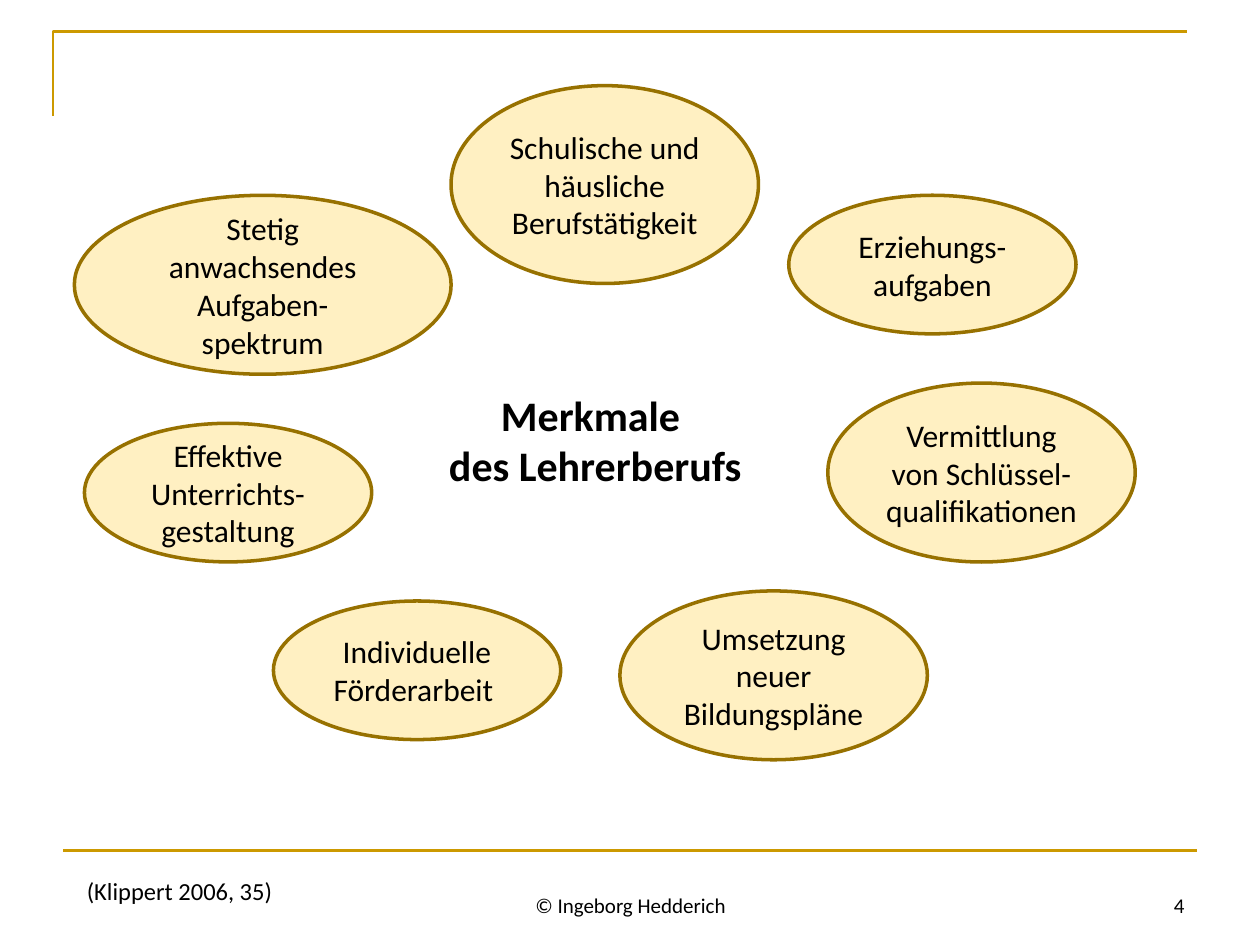
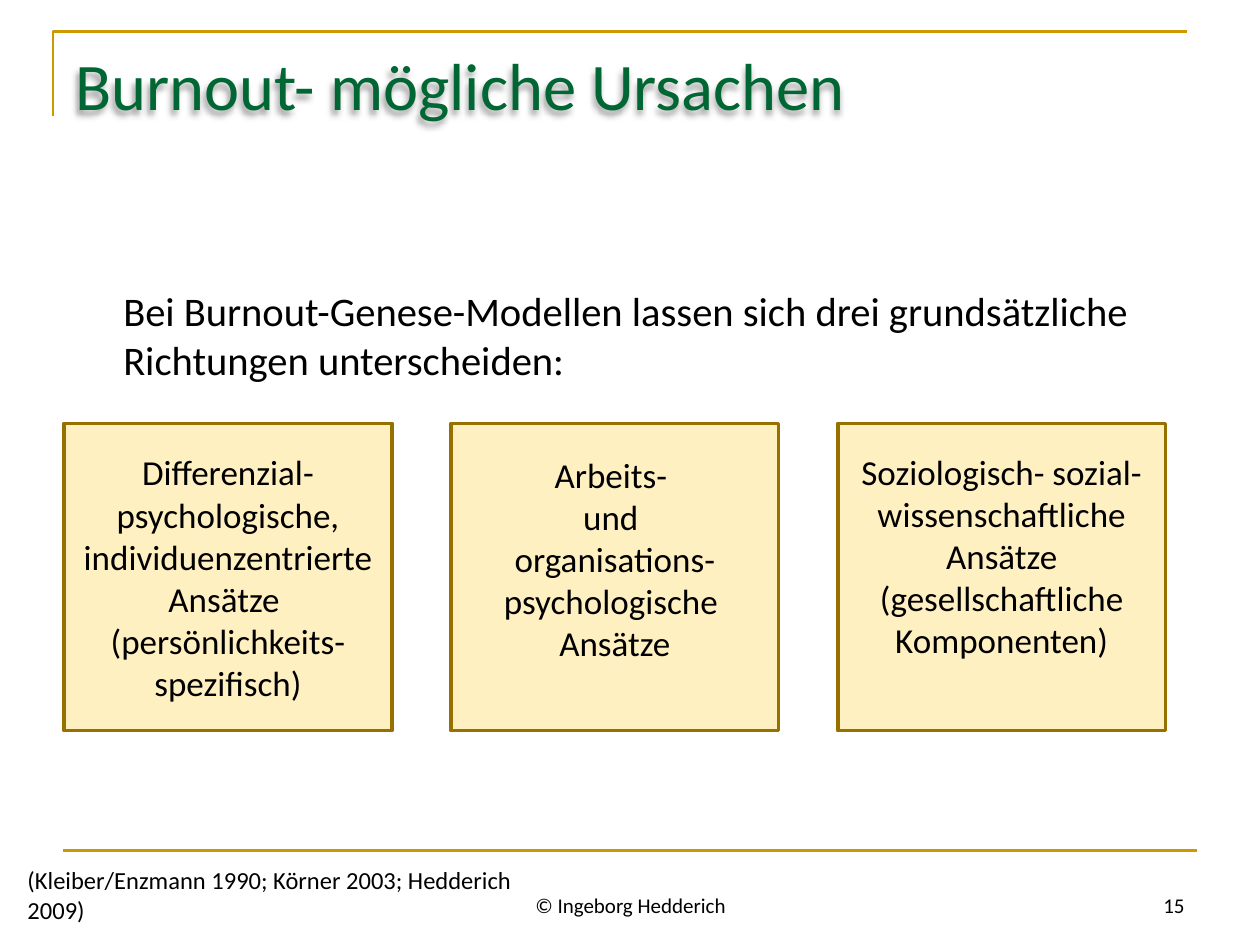
from lxml import etree
from pptx import Presentation
from pptx.dml.color import RGBColor
from pptx.enum.shapes import MSO_CONNECTOR, MSO_SHAPE
from pptx.enum.text import MSO_ANCHOR, PP_ALIGN
from pptx.oxml.ns import qn
from pptx.util import Inches, Pt

OVAL, BOX = MSO_SHAPE.OVAL, MSO_SHAPE.RECTANGLE
STRAIGHT = MSO_CONNECTOR.STRAIGHT
TOP, MIDDLE, BOTTOM = MSO_ANCHOR.TOP, MSO_ANCHOR.MIDDLE, MSO_ANCHOR.BOTTOM
LEFT, CENTER, RIGHT = PP_ALIGN.LEFT, PP_ALIGN.CENTER, PP_ALIGN.RIGHT

COLORS = {
    "rule": "CC9900",
    "fill": "FFF0C2",
    "outline": "977100",
    "title": "006633",
    "text": "000000",
}
FONT = "Calibri"
COLUMNS, ROWS = 100, 75  # grid cells across and down the slide


def color(name):
    return RGBColor.from_string(COLORS[name])


class Deck:
    """Holds the shared style and the slide being built."""

    def __init__(self):
        self.prs = Presentation()
        self.prs.slide_width, self.prs.slide_height = Inches(10), Inches(7.5)
        self.shapes = None

    def x(self, columns):
        return round(self.prs.slide_width * columns / COLUMNS)

    def y(self, rows):
        return round(self.prs.slide_height * rows / ROWS)

    def area(self, left, top, width, height):
        return self.x(left), self.y(top), self.x(width), self.y(height)

    def new_slide(self, number):
        self.shapes = self.prs.slides.add_slide(self.prs.slide_layouts[6]).shapes
        self.corner()
        self.rule(5, 95, 67.5)
        self.text((34.2, 68.3, 31.7, 5), "© Ingeborg Hedderich", 12, CENTER, BOTTOM)
        self.text((71.7, 68.3, 23.3, 5), str(number), 12, RIGHT, BOTTOM)

    def corner(self):
        left, top = self.x(4.2), self.y(2.5)
        outline = self.shapes.build_freeform(left, self.y(9.2))
        outline.add_line_segments([(left, top), (self.x(94.2), top)], close=False)
        corner = outline.convert_to_shape()
        corner.shadow.inherit = False
        corner.fill.background()
        self.stroke(corner, "rule", 1.5)

    def rule(self, start, end, row):
        rule = self.shapes.add_connector(
            STRAIGHT, self.x(start), self.y(row), self.x(end), self.y(row))
        self.stroke(rule, "rule", 1.5)
        etree.SubElement(rule._element.spPr, qn("a:effectLst"))

    def stroke(self, shape, name, width):
        shape.line.color.rgb = color(name)
        shape.line.width = Pt(width)

    def set_text(self, shape, text, size, align, anchor, ink="text", bold=False):
        frame = shape.text_frame
        frame.text = text
        frame.word_wrap = True
        frame.vertical_anchor = anchor
        for paragraph in frame.paragraphs:
            paragraph.alignment = align
            font = paragraph.font
            font.name, font.size, font.bold = FONT, Pt(size), bold
            font.color.rgb = color(ink)

    def text(self, area, text, size, align=LEFT, anchor=TOP, **style):
        box = self.shapes.add_textbox(*self.area(*area))
        self.set_text(box, text, size, align, anchor, **style)
        return box

    def title(self, text):
        title = self.text((5, 3, 90, 12.5), text, 38, ink="title")
        effects = etree.SubElement(title._element.spPr, qn("a:effectLst"))
        shadow = etree.SubElement(effects, qn("a:outerShdw"), blurRad="50800",
                                  dist="38100", dir="8100000")
        black = etree.SubElement(shadow, qn("a:srgbClr"), val=COLORS["text"])
        etree.SubElement(black, qn("a:alpha"), val="40000")

    def panel(self, kind, area, text, size, space_below=0.0):
        panel = self.shapes.add_shape(kind, *self.area(*area))
        panel.shadow.inherit = False
        panel.fill.solid()
        panel.fill.fore_color.rgb = color("fill")
        self.stroke(panel, "outline", 2)
        self.set_text(panel, text, size, CENTER, MIDDLE)
        panel.text_frame.margin_bottom = Inches(0.05 + space_below)


def build_profession(deck):
    deck.new_slide(4)
    deck.text((5.9, 69, 18.9, 3.4), "(Klippert 2006, 35)", 14)
    deck.text((31.9, 30.4, 30.7, 9.1), "Merkmale \ndes Lehrerberufs", 24,
              CENTER, bold=True)

    # Features around the centre, with the common oval sizes
    small, wide = (22.8, 11), 24.4
    features = [
        ((5.9, 15.5), (29.9, 14.2), "Stetig anwachsendes Aufgaben-spektrum"),
        ((6.7, 33.6), small, "Effektive Unterrichts-\ngestaltung"),
        ((21.7, 47.7), small, "Individuelle Förderarbeit "),
        ((49.2, 46.9), (wide, 13.4), "Umsetzung neuer Bildungspläne"),
        ((62.6, 15.5), small, "Erziehungs-aufgaben"),
        ((65.7, 30.4), (wide, 14.2), "Vermittlung von Schlüssel-qualifikationen"),
        ((35.8, 6.8), (wide, 15.7), "Schulische und häusliche Berufstätigkeit"),
    ]
    for place, size, feature in features:
        deck.panel(OVAL, place + size, feature, 18)


def build_causes(deck):
    deck.new_slide(15)
    deck.title("Burnout- mögliche Ursachen")
    deck.text((8.8, 22.2, 86.2, 9),
              "Bei Burnout-Genese-Modellen lassen sich drei grundsätzliche "
              "Richtungen unterscheiden:", 23.2)
    deck.text((1.2, 68.2, 41.7, 5.7),
              "(Kleiber/Enzmann 1990; Körner 2003; Hedderich 2009)", 14)

    # Three approaches in equal steps; the shorter texts sit a line higher
    approaches = [
        ("Differenzial-psychologische, individuenzentrierte Ansätze \n"
         "(persönlichkeits-spezifisch)", 0),
        ("Arbeits- \nund \norganisations-psychologische \nAnsätze", 0.3),
        ("Soziologisch- sozial-wissenschaftliche Ansätze "
         "(gesellschaftliche Komponenten)", 0.34),
    ]
    for step, (approach, space_below) in enumerate(approaches):
        deck.panel(BOX, (5.1 + 30.7 * step, 33.6, 26, 24.4), approach, 20,
                   space_below)


def main():
    deck = Deck()
    build_profession(deck)
    build_causes(deck)
    deck.prs.save("out.pptx")


if __name__ == "__main__":
    main()
